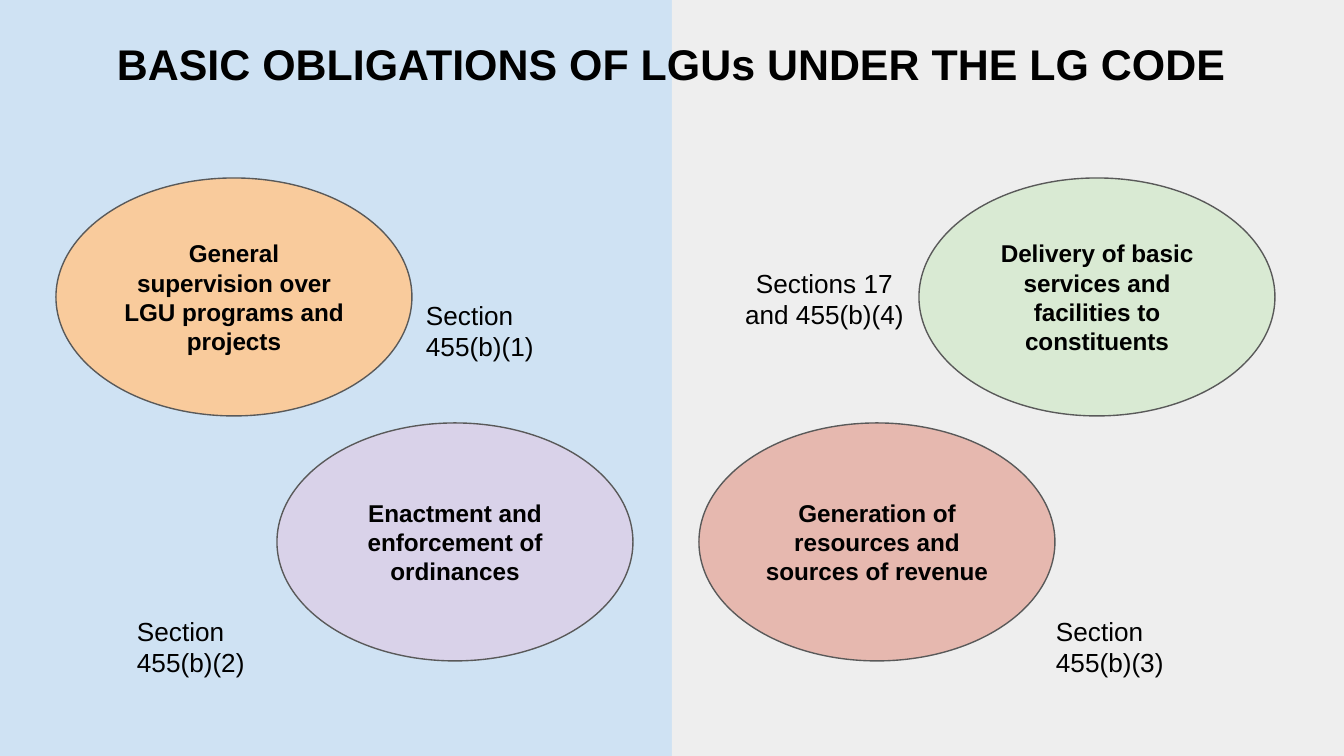
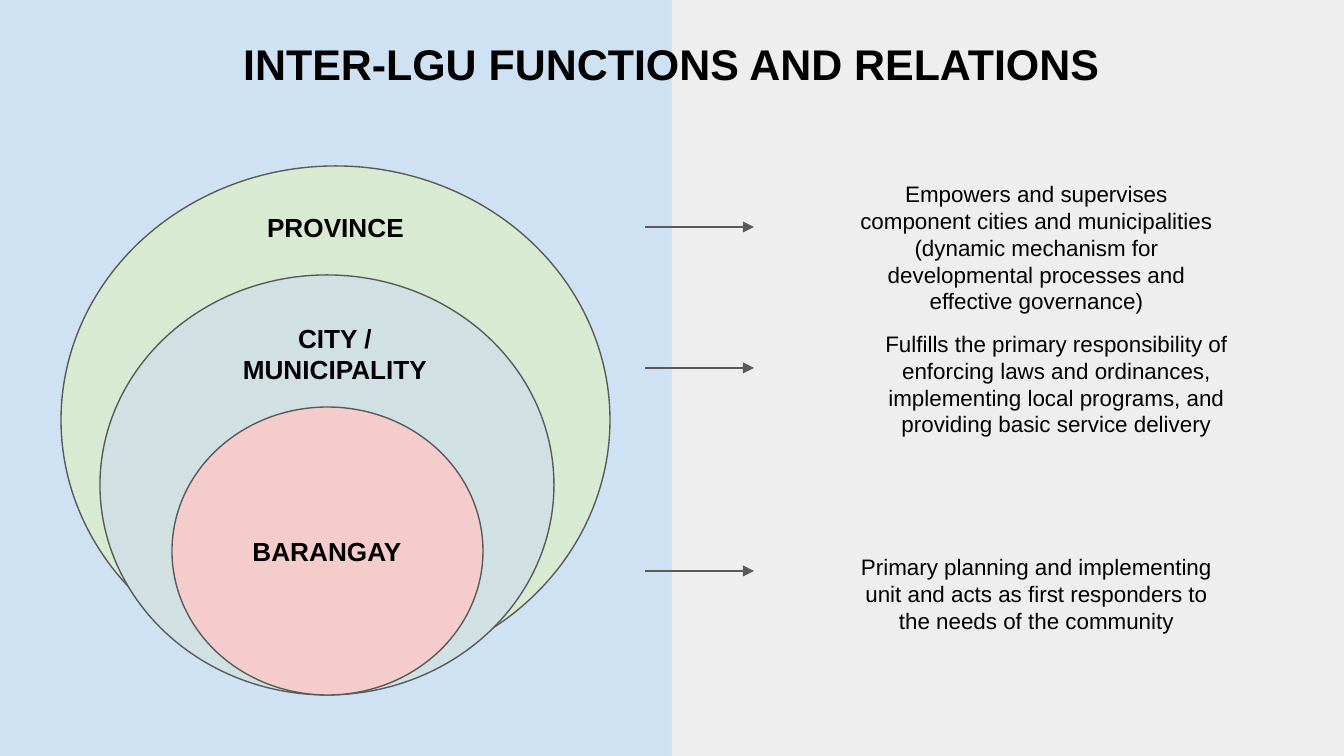
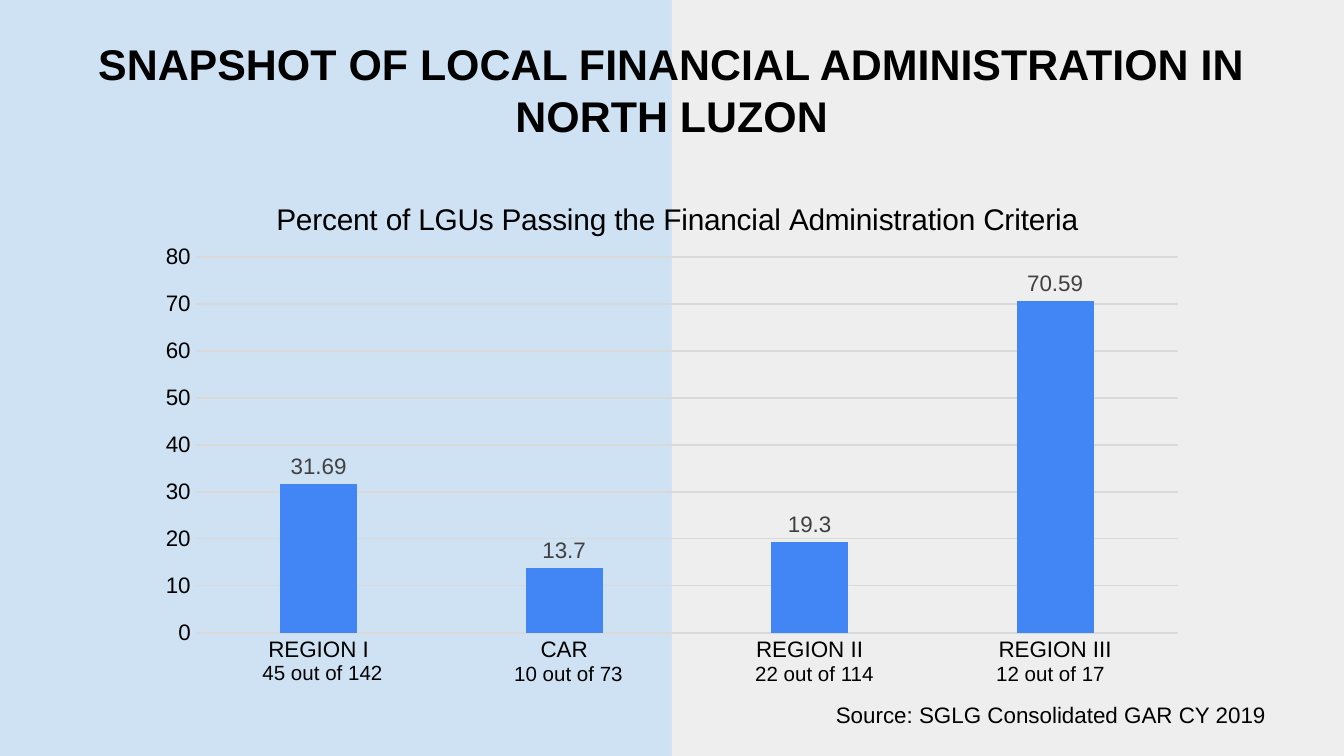
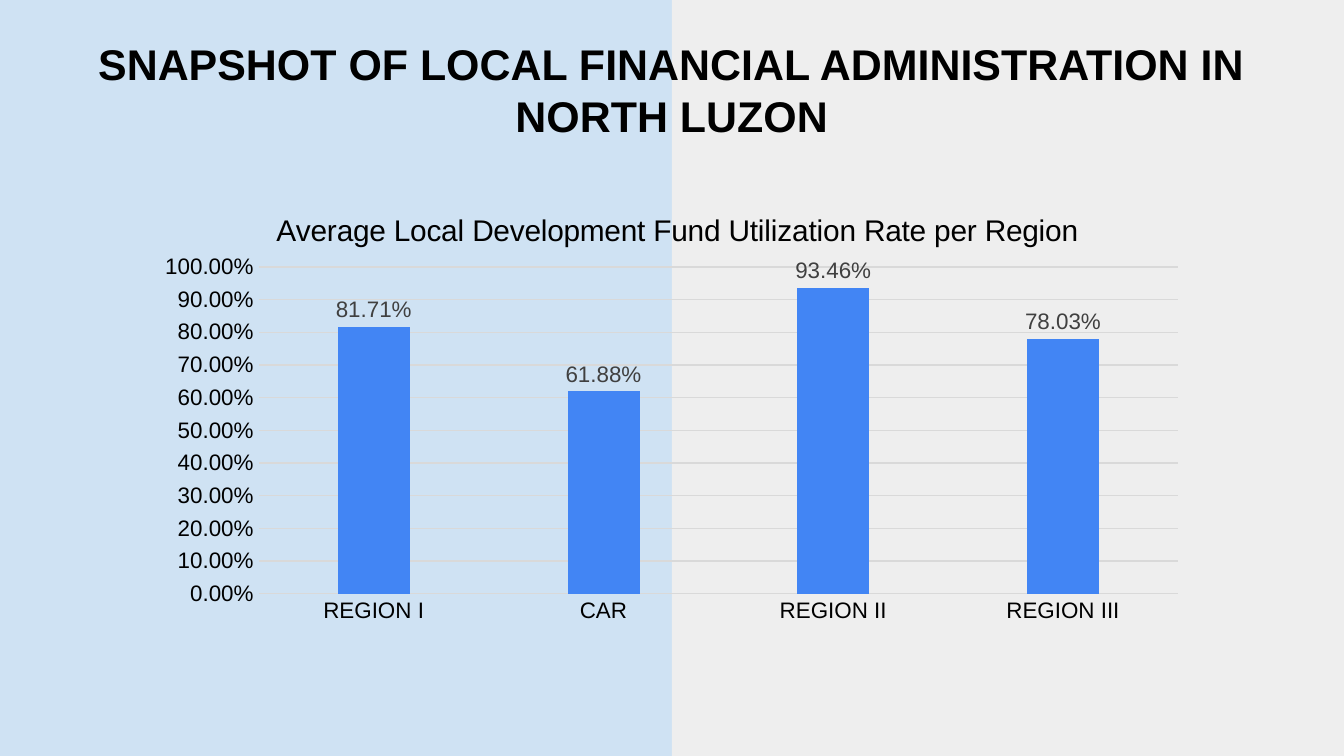
from dataclasses import dataclass

from lxml import etree
from pptx import Presentation
from pptx.chart.data import CategoryChartData
from pptx.dml.color import RGBColor
from pptx.enum.chart import XL_CHART_TYPE, XL_LABEL_POSITION, XL_TICK_MARK
from pptx.enum.shapes import MSO_CONNECTOR, MSO_SHAPE
from pptx.enum.text import MSO_ANCHOR, MSO_AUTO_SIZE, PP_ALIGN
from pptx.oxml.ns import qn
from pptx.util import Pt

# Enum members
COLUMNS = XL_CHART_TYPE.COLUMN_CLUSTERED
LABEL_OUTSIDE = XL_LABEL_POSITION.OUTSIDE_END
NO_TICK = XL_TICK_MARK.NONE
STRAIGHT = MSO_CONNECTOR.STRAIGHT
ELLIPSE, RECTANGLE = MSO_SHAPE.OVAL, MSO_SHAPE.RECTANGLE
TOP, MIDDLE = MSO_ANCHOR.TOP, MSO_ANCHOR.MIDDLE
FIT_TEXT, NO_FIT = MSO_AUTO_SIZE.SHAPE_TO_FIT_TEXT, MSO_AUTO_SIZE.NONE
LEFT, CENTER = PP_ALIGN.LEFT, PP_ALIGN.CENTER

# Geometry
EMU_PER_PX = 914400 / 134.4
PAGE_WIDTH, PAGE_HEIGHT = 1344, 756
TITLE_ONLY = 5
INSET, SMALL_INSET = 13, 7


@dataclass(frozen=True)
class Theme:
    font: str = "Arial"
    ink: str = "000000"
    outline: str = "595959"
    background: str = "CFE2F3"
    panel: str = "EEEEEE"
    orange: str = "F9CB9C"
    purple: str = "D9D2E9"
    green: str = "D9EAD3"
    red: str = "E6B8AF"
    teal: str = "D0E0E3"
    pink: str = "F4CCCC"
    bar: str = "4285F4"
    grid: str = "D9D9D9"
    value_label: str = "404040"
    title_size: int = 23
    chart_title_size: int = 16
    label_size: int = 14
    ellipse_size: int = 13
    body_size: int = 12
    count_size: int = 11
    chart_size: int = 10
    line_width: float = 0.75


THEME = Theme()


# Formatting helpers
def px(length):
    return round(length * EMU_PER_PX)


def set_values(target, values):
    for name, value in values.items():
        setattr(target, name, value)


def format_font(font, size, color=THEME.ink, bold=False):
    set_values(font, {"name": THEME.font, "size": Pt(size), "bold": bold})
    font.color.rgb = RGBColor.from_string(color)


def format_fill(fill, color):
    fill.solid()
    fill.fore_color.rgb = RGBColor.from_string(color)


def format_line(line, color=THEME.outline):
    line.width = Pt(THEME.line_width)
    format_fill(line.fill, color)


def write_text(box, text, size, bold=False, align=CENTER, anchor=TOP,
               fit=FIT_TEXT, vertical_inset=INSET):
    frame = box.text_frame
    set_values(frame, {
        "word_wrap": True, "auto_size": fit, "vertical_anchor": anchor,
        "margin_left": px(INSET), "margin_right": px(INSET),
        "margin_top": px(vertical_inset), "margin_bottom": px(vertical_inset),
    })
    para = frame.paragraphs[0]
    para.alignment = align
    span = para.add_run()
    span.text = text
    format_font(span.font, size, bold=bold)


# Page elements
def add_page(deck, title, title_height=79):
    page = deck.slides.add_slide(deck.slide_layouts[TITLE_ONLY])
    box = page.shapes.title
    set_values(box, {"left": px(51), "top": px(25),
                     "width": px(1242), "height": px(title_height)})
    write_text(box, title, THEME.title_size, bold=True)
    return page


def add_text(page, text, left, top, width, height, size=THEME.label_size, **style):
    box = page.shapes.add_textbox(px(left), px(top), px(width), px(height))
    write_text(box, text, size, **style)


def add_filled_shape(page, kind, color, left, top, width, height):
    shape = page.shapes.add_shape(kind, px(left), px(top), px(width), px(height))
    shape.shadow.inherit = False
    format_fill(shape.fill, color)
    return shape


def add_ellipse(page, color, left, top, width, height, text=None):
    ellipse = add_filled_shape(page, ELLIPSE, color, left, top, width, height)
    format_line(ellipse.line)
    if text:
        write_text(ellipse, text, THEME.ellipse_size, bold=True,
                   anchor=MIDDLE, fit=NO_FIT)


def add_arrow(page, start, end, y):
    arrow = page.shapes.add_connector(STRAIGHT, px(start), px(y), px(end), px(y))
    format_line(arrow.line)
    properties = arrow.element.spPr
    etree.SubElement(properties.find(qn("a:ln")), qn("a:tailEnd"), type="triangle")
    etree.SubElement(properties, qn("a:effectLst"))


def place_chart_part(part, index, values):
    """Give a chart title or plot area a manual layout."""
    for old in part.findall(qn("c:layout")):
        part.remove(old)
    layout = etree.Element(qn("c:layout"))
    manual = etree.SubElement(layout, qn("c:manualLayout"))
    for name, value in values.items():
        etree.SubElement(manual, qn(f"c:{name}"), val=str(value))
    part.insert(index, layout)


def add_column_chart(page, title, values, area, title_at, plot, maximum,
                     number_format="General", overlap=0):
    left, top, width, height = area
    data = CategoryChartData(number_format=number_format)
    data.categories = ["REGION I", "CAR", "REGION II", "REGION III"]
    data.add_series("Series 1", values)
    chart = page.shapes.add_chart(COLUMNS, *map(px, area), data).chart
    chart.has_legend = False
    format_font(chart.font, THEME.chart_size)

    # Title
    chart.has_title = True
    heading = chart.chart_title
    span = heading.text_frame.paragraphs[0].add_run()
    span.text = title
    format_font(span.font, THEME.chart_title_size)
    place_chart_part(heading._element, 1, {
        "xMode": "edge", "yMode": "edge",
        "x": (title_at[0] - left) / width, "y": (title_at[1] - top) / height,
    })

    # Columns
    columns = chart.plots[0]
    set_values(columns, {"gap_width": 219, "overlap": overlap,
                         "vary_by_categories": False, "has_data_labels": True})
    format_fill(columns.series[0].format.fill, THEME.bar)
    set_values(columns.data_labels, {
        "show_value": True, "position": LABEL_OUTSIDE,
        "number_format": number_format, "number_format_is_linked": False,
    })
    format_font(columns.data_labels.font, THEME.body_size, THEME.value_label)

    # Axes
    for axis in (chart.category_axis, chart.value_axis):
        set_values(axis, {"major_tick_mark": NO_TICK, "minor_tick_mark": NO_TICK})
        format_font(axis.tick_labels.font, THEME.body_size)
    format_line(chart.category_axis.format.line, THEME.grid)
    scale = chart.value_axis
    set_values(scale, {"minimum_scale": 0, "maximum_scale": maximum,
                       "major_unit": maximum / (8 if maximum > 1 else 10),
                       "has_major_gridlines": True})
    set_values(scale.tick_labels, {"number_format": number_format,
                                   "number_format_is_linked": False})
    scale.format.line.fill.background()
    format_line(scale.major_gridlines.format.line, THEME.grid)

    plot_left, plot_top, plot_width, plot_height = plot
    place_chart_part(columns._element.getparent(), 0, {
        "layoutTarget": "inner", "xMode": "edge", "yMode": "edge",
        "x": (plot_left - left) / width, "y": (plot_top - top) / height,
        "w": plot_width / width, "h": plot_height / height,
    })


# Shared background: blue page with a grey right half
def style_layout(layout, page):
    format_fill(layout.background.fill, THEME.background)
    half = PAGE_WIDTH // 2
    panel = add_filled_shape(page, RECTANGLE, THEME.panel, half, 0, half, PAGE_HEIGHT)
    panel.line.fill.background()
    layout.shapes.element.insert(2, panel.element)


# Pages
def build_obligations(deck):
    page = add_page(deck, "BASIC OBLIGATIONS OF LGUs UNDER THE LG CODE")
    style_layout(page.slide_layout, page)
    upper, lower = 178, 423
    for text, color, left, top in (
        ("General supervision over LGU programs and projects", THEME.orange, 56, upper),
        ("Enactment and enforcement of ordinances", THEME.purple, 277, lower),
        ("Delivery of basic services and facilities to constituents",
         THEME.green, 919, upper),
        ("Generation of resources and sources of revenue", THEME.red, 699, lower),
    ):
        add_ellipse(page, color, left, top, 356, 238, text)
    for text, left, top, align in (
        ("Section 455(b)(1)", 413, 286, LEFT),
        ("Section 455(b)(2)", 124, 602, LEFT),
        ("Section 455(b)(3)", 1043, 602, LEFT),
        ("Sections 17 and 455(b)(4)", 731, 254, CENTER),
    ):
        add_text(page, text, left, top, 187, 90, align=align)


def build_relations(deck):
    page = add_page(deck, "INTER-LGU FUNCTIONS AND RELATIONS")
    for color, *area in (
        (THEME.green, 61, 166, 549, 508),
        (THEME.teal, 100, 275, 454, 420),
        (THEME.pink, 172, 407, 311, 288),
    ):
        add_ellipse(page, color, *area)
    for text, *area in (
        ("PROVINCE", 232, 198, 207, 59),
        ("CITY / MUNICIPALITY", 224, 309, 222, 90),
        ("BARANGAY", 216, 522, 222, 59),
    ):
        add_text(page, text, *area, bold=True)
    for y in (227, 368, 571):
        add_arrow(page, 645, 754, y)
    for text, left, top, height in (
        ("Primary planning and implementing unit and acts as first responders "
         "to the needs of the community", 839, 540, 109),
        ("Empowers and supervises component cities and municipalities (dynamic "
         "mechanism for developmental processes and effective governance)",
         839, 167, 163),
        ("Fulfills the primary responsibility of enforcing laws and ordinances, "
         "implementing local programs, and providing basic service delivery",
         859, 317, 136),
    ):
        add_text(page, text, left, top, 395, height, THEME.body_size)


def add_finance_page(deck):
    return add_page(deck, "SNAPSHOT OF LOCAL FINANCIAL ADMINISTRATION IN NORTH LUZON", 132)


def build_passing_rates(deck):
    page = add_finance_page(deck)
    add_text(page, "Source: SGLG Consolidated GAR CY 2019", 801, 688, 500, 54,
             THEME.body_size)
    add_column_chart(
        page, "Percent of LGUs Passing the Financial Administration Criteria",
        (31.69, 13.7, 19.3, 70.59), area=(145, 172, 1055, 500),
        title_at=(271, 195), plot=(196, 257, 982, 376), maximum=80)
    for text, left, top in (
        ("45 out of 142", 242, 653),
        ("10 out of 73", 488, 654),
        ("22 out of 114", 734, 654),
        ("12 out of 17", 970, 654),
    ):
        add_text(page, text, left, top, 161, 39, THEME.count_size,
                 vertical_inset=SMALL_INSET)


def build_fund_utilization(deck):
    page = add_finance_page(deck)
    add_column_chart(
        page, "Average Local Development Fund Utilization Rate per Region",
        (0.8171, 0.6188, 0.9346, 0.7803), area=(145, 184, 1055, 448),
        title_at=(271, 206), plot=(259, 267, 919, 327), maximum=1,
        number_format="0.00%", overlap=-27)


def main():
    deck = Presentation()
    set_values(deck, {"slide_width": px(PAGE_WIDTH), "slide_height": px(PAGE_HEIGHT)})
    build_obligations(deck)
    build_relations(deck)
    build_passing_rates(deck)
    build_fund_utilization(deck)
    deck.save("out.pptx")


if __name__ == "__main__":
    main()
